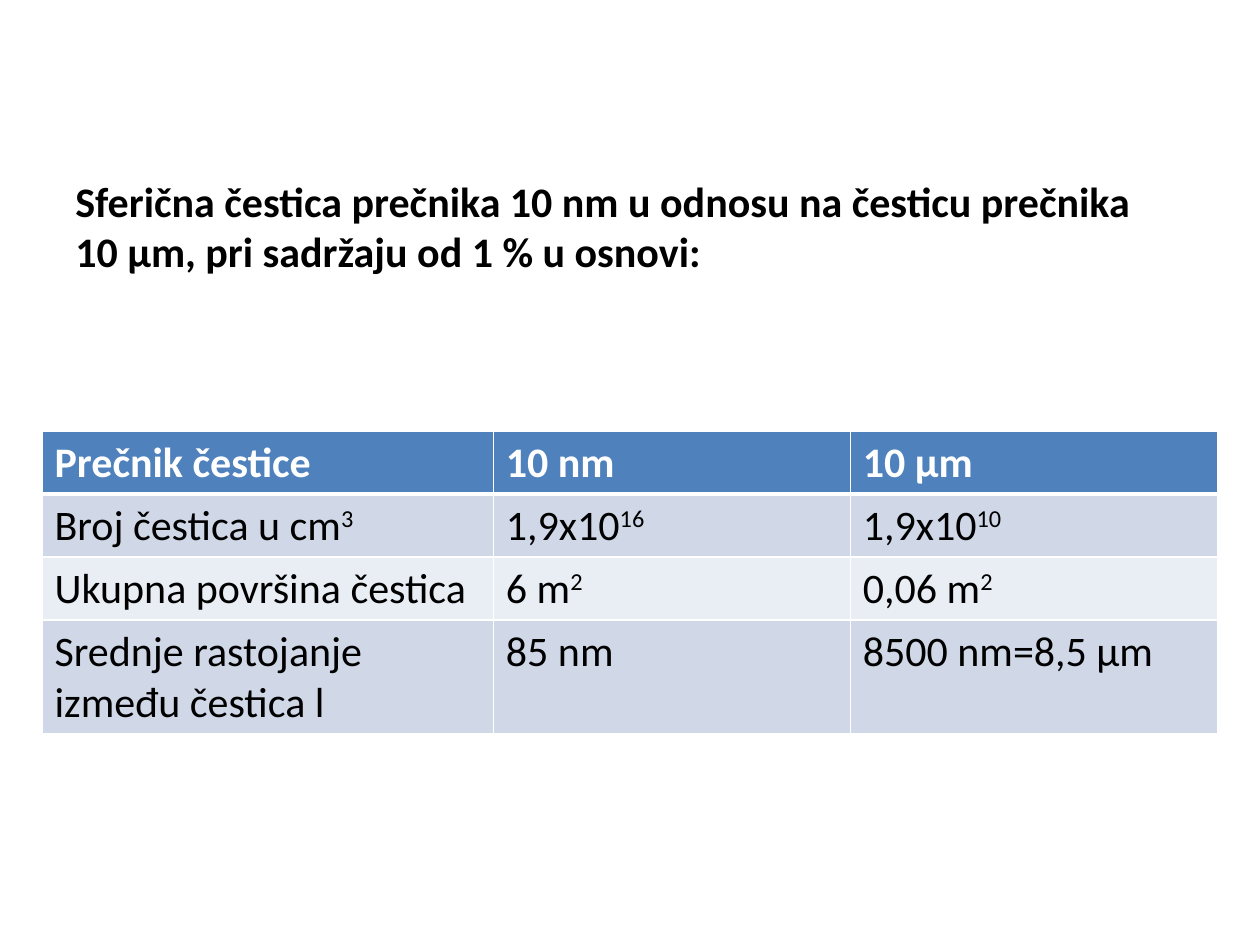
from typing import NamedTuple

import pptx
import pptx.dml.color
import pptx.oxml.ns
import pptx.util
from lxml import etree

Pt = pptx.util.Pt

COLOURS = {
    "header": "4F81BD",
    "odd_row": "D0D8E8",
    "even_row": "E9EDF4",
    "border": "FFFFFF",
    "header_text": "FFFFFF",
    "text": "000000",
}


class Entry(NamedTuple):
    text: str
    exponent: str = ""


HEADING = (
    "Sferična čestica prečnika 10 nm u odnosu na česticu prečnika 10 μm, "
    "pri sadržaju od 1 % u osnovi:"
)
ROWS = [
    [Entry("Prečnik čestice"), Entry("10 nm"), Entry("10 μm")],
    [Entry("Broj čestica u cm", "3"), Entry("1,9x10", "16"), Entry("1,9x10", "10")],
    [Entry("Ukupna površina čestica"), Entry("6 m", "2"), Entry("0,06 m", "2")],
    [Entry("Srednje rastojanje između čestica l"), Entry("85 nm"), Entry("8500 nm=8,5 μm")],
]
COLUMN_WIDTHS = [257.9, 204, 210.1]
ROW_HEIGHTS = [36, 36, 36, 64.8]


def rgb(name: str) -> pptx.dml.color.RGBColor:
    return pptx.dml.color.RGBColor.from_string(COLOURS[name])


def add_text(paragraph, text: str, *, colour: str = "text", bold: bool = False,
             size: float = 24, superscript: bool = False) -> None:
    run = paragraph.add_run()
    run.text = text
    run.font.name = "Calibri"
    run.font.size = Pt(size)
    run.font.bold = bold
    run.font.color.rgb = rgb(colour)
    if superscript:
        run.font._element.set("baseline", "30000")


def add_borders(cell, bottom_width: float) -> None:
    """Draw the cell's four borders; call before filling, as the schema puts lines first."""
    properties = cell._tc.get_or_add_tcPr()
    qn = pptx.oxml.ns.qn
    for side, width in {"L": 1, "R": 1, "T": 1, "B": bottom_width}.items():
        line = etree.SubElement(properties, qn(f"a:ln{side}"), w=str(Pt(width)))
        fill = etree.SubElement(line, qn("a:solidFill"))
        etree.SubElement(fill, qn("a:srgbClr"), val=COLOURS["border"])


def add_heading(slide) -> None:
    shape = slide.shapes.add_textbox(Pt(36), Pt(96.5), Pt(635.8), Pt(65.5))
    shape.text_frame.word_wrap = True
    add_text(shape.text_frame.paragraphs[0], HEADING, bold=True)


def add_particle_table(slide) -> None:
    table = slide.shapes.add_table(
        len(ROWS), len(COLUMN_WIDTHS), Pt(24), Pt(246.2),
        Pt(sum(COLUMN_WIDTHS)), Pt(sum(ROW_HEIGHTS)),
    ).table
    for column, width in zip(table.columns, COLUMN_WIDTHS):
        column.width = Pt(width)
    for row, height in zip(table.rows, ROW_HEIGHTS):
        row.height = Pt(height)

    for row_index, entries in enumerate(ROWS):
        is_header = row_index == 0
        band = "header" if is_header else "odd_row" if row_index % 2 else "even_row"
        for column_index, entry in enumerate(entries):
            cell = table.cell(row_index, column_index)
            add_borders(cell, bottom_width=3 if is_header else 1)
            cell.fill.solid()
            cell.fill.fore_color.rgb = rgb(band)
            paragraph = cell.text_frame.paragraphs[0]
            add_text(paragraph, entry.text, bold=is_header,
                     colour="header_text" if is_header else "text")
            if entry.exponent:
                add_text(paragraph, entry.exponent, superscript=True)


def main() -> None:
    presentation = pptx.Presentation()
    presentation.slide_width = Pt(720)
    presentation.slide_height = Pt(540)
    slide = presentation.slides.add_slide(presentation.slide_layouts[6])
    add_heading(slide)
    add_particle_table(slide)
    presentation.save("out.pptx")


if __name__ == "__main__":
    main()
